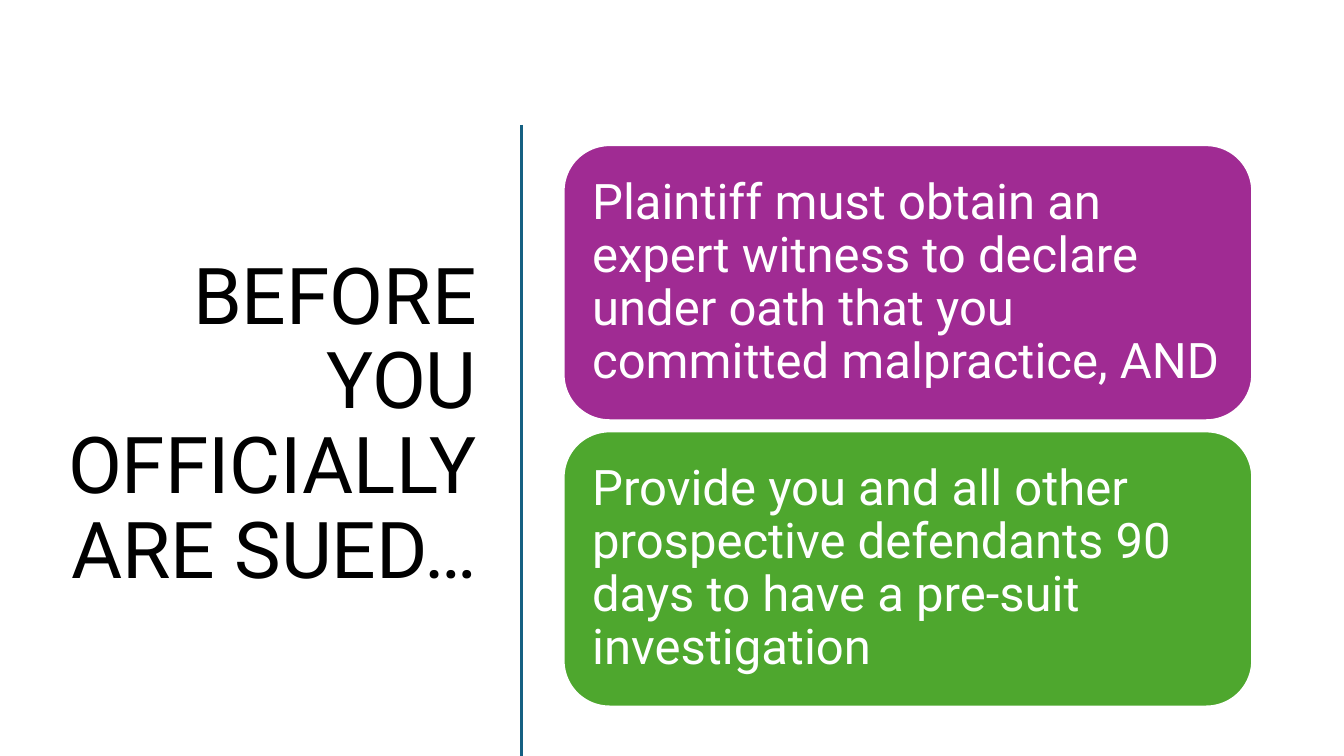
"""Build the slide on what happens before a lawsuit is official."""
from lxml import etree
from pptx import Presentation
from pptx import util as u
from pptx.dml.color import RGBColor
from pptx.enum import shapes, text
from pptx.oxml.ns import qn

COLORS = {"ink": "000000", "white": "FFFFFF", "rule": "156082",
          "purple": "A02B93", "green": "4EA72E"}
CARDS = [
    ("Plaintiff must obtain an expert witness to declare under oath "
     "that you committed malpractice, AND", "purple"),
    ("Provide you and all other prospective defendants 90 days "
     "to have a pre-suit investigation", "green"),
]
LEFT, TOP, WIDTH, HEIGHT, GAP = 5.59, 1.44, 6.83, 2.73, 0.11


def write(sp, words, size, color, align, inset):
    tf = sp.text_frame
    tf.word_wrap = True
    tf.auto_size = text.MSO_AUTO_SIZE.NONE
    tf.vertical_anchor = text.MSO_ANCHOR.MIDDLE
    tf.margin_left = tf.margin_right = u.Inches(inset)
    tf.margin_top = tf.margin_bottom = u.Inches(inset)
    p = tf.paragraphs[0]
    p.alignment = align
    p.line_spacing = 0.9
    r = p.add_run()
    r.text = words
    r.font.name = "Roboto"
    r.font.size = u.Pt(size)
    r.font.color.rgb = RGBColor.from_string(COLORS[color])


prs = Presentation()
prs.slide_width, prs.slide_height = u.Inches(13.33), u.Inches(7.5)
s = prs.slides.add_slide(prs.slide_layouts[5])
s.background.fill.solid()
s.background.fill.fore_color.rgb = RGBColor.from_string(COLORS["white"])

title = s.shapes.title
title.left, title.top = u.Inches(0.52), u.Inches(1.17)
title.width, title.height = u.Inches(4.31), u.Inches(6.11)
write(title, "BEFORE YOU OFFICIALLY ARE SUED…", size=56, color="ink",
      align=text.PP_ALIGN.RIGHT, inset=0.1)

rule = s.shapes.add_connector(shapes.MSO_CONNECTOR.STRAIGHT, u.Inches(5.17),
                              u.Inches(1.24), u.Inches(5.17), prs.slide_height)
rule.line.color.rgb = RGBColor.from_string(COLORS["rule"])
rule.line.width = u.Pt(2)
etree.SubElement(rule._element.spPr, qn("a:effectLst"))

for row, (words, color) in enumerate(CARDS):
    sp = s.shapes.add_shape(shapes.MSO_SHAPE.ROUNDED_RECTANGLE, u.Inches(LEFT),
                            u.Inches(TOP + row * (HEIGHT + GAP)),
                            u.Inches(WIDTH), u.Inches(HEIGHT))
    sp.shadow.inherit = False
    sp.fill.solid()
    sp.fill.fore_color.rgb = RGBColor.from_string(COLORS[color])
    sp.line.color.rgb = RGBColor.from_string(COLORS["white"])
    sp.line.width = u.Pt(1.5)
    write(sp, words, size=35, color="white", align=text.PP_ALIGN.LEFT, inset=0.15)

prs.save("out.pptx")
